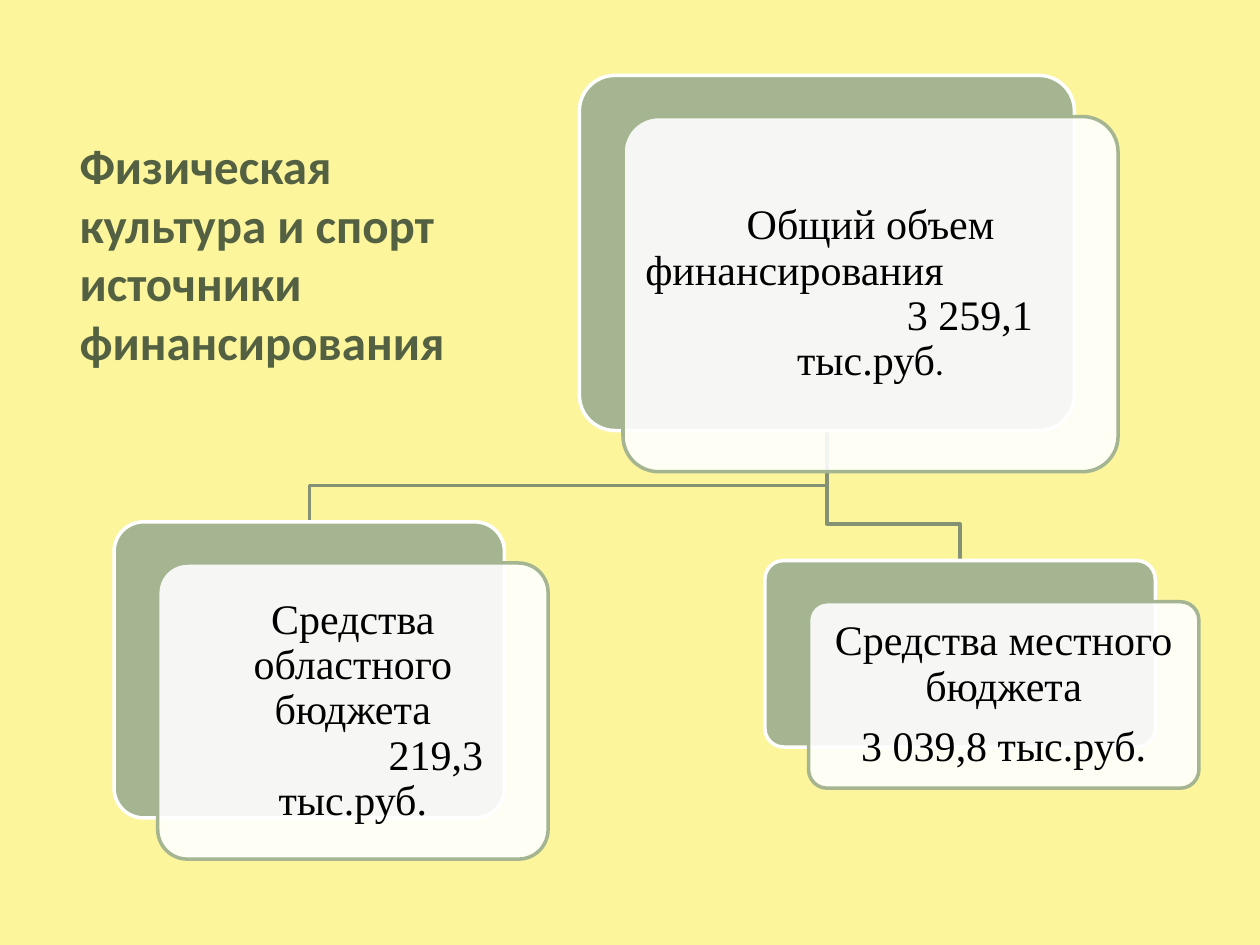
from pptx import Presentation
from pptx.dml.color import RGBColor
from pptx.enum import shapes, text
from pptx.oxml import parse_xml
from pptx.oxml.ns import nsdecls, qn
from pptx.util import Cm, Pt

SAGE, WHITE, LINK = "A5B592", "FFFFFF", "849175"
SERIF, SANS = "Times New Roman", "Calibri"
CENTER, LEFT = text.PP_ALIGN.CENTER, text.PP_ALIGN.LEFT
OFFSET_X, OFFSET_Y = 0.88, 0.83  # front panel against its back panel
ELBOW = 0.73  # height of the bend above the lower card
GAP = 8.4  # space between separate paragraphs, points


def color(value):
    return RGBColor.from_string(value)


def add_run(paragraph, words, size, face, tint, bold=False):
    run = paragraph.add_run()
    run.text = words
    run.font.size, run.font.name, run.font.bold = Pt(size), face, bold
    run.font.color.rgb = color(tint)


def heading(slide, box, lines):
    title = slide.shapes.title
    title.left, title.top, title.width, title.height = map(Cm, box)
    frame = title.text_frame
    frame.word_wrap = True
    frame.auto_size = text.MSO_AUTO_SIZE.NONE
    frame.vertical_anchor = text.MSO_ANCHOR.TOP
    for index, line in enumerate(lines):
        paragraph = frame.add_paragraph() if index else frame.paragraphs[0]
        paragraph.alignment = LEFT
        add_run(paragraph, line, 28, SANS, "536142", True)


def panel(slide, box, fill, outline):
    shape = slide.shapes.add_shape(
        shapes.MSO_SHAPE.ROUNDED_RECTANGLE, *map(Cm, box))
    shape.adjustments[0] = 0.1
    shape.shadow.inherit = False
    shape.fill.solid()
    shape.fill.fore_color.rgb = color(fill)
    shape.line.color.rgb = color(outline)
    shape.line.width = Pt(2)
    return shape


def card(slide, box, lines):
    """Two overlapping panels; lines are (runs, alignment, indent, space before)."""
    left, top, width, height = box
    panel(slide, box, SAGE, WHITE)
    front = panel(
        slide, (left + OFFSET_X, top + OFFSET_Y, width, height), WHITE, SAGE)
    # Let the back panel show through
    tint = front.fill._xPr.find(qn("a:solidFill"))[0]
    tint.append(parse_xml(f'<a:alpha {nsdecls("a")} val="90000"/>'))

    frame = front.text_frame
    frame.word_wrap = True
    frame.vertical_anchor = text.MSO_ANCHOR.MIDDLE
    frame.margin_left = frame.margin_right = Cm(0.24)
    frame.margin_top = frame.margin_bottom = Cm(0.24)
    for index, (runs, alignment, indent, before) in enumerate(lines):
        paragraph = frame.add_paragraph() if index else frame.paragraphs[0]
        paragraph.alignment = alignment
        paragraph.line_spacing = 0.9
        paragraph.space_before = Pt(before)
        paragraph._p.get_or_add_pPr().set("marL", str(Cm(indent)))
        for words, size, face in runs:
            add_run(paragraph, words, size, face, "000000")


def branch(slide, parent, child):
    """Elbow line from the parent's bottom middle to the child's top middle."""
    start_x, start_y = parent[0] + parent[2] / 2, parent[1] + parent[3]
    end_x, end_y = child[0] + child[2] / 2, child[1]
    bend = end_y - ELBOW
    builder = slide.shapes.build_freeform(Cm(start_x), Cm(start_y))
    builder.add_line_segments(
        [(Cm(x), Cm(y)) for x, y in
         ((start_x, bend), (end_x, bend), (end_x, end_y))], close=False)
    link = builder.convert_to_shape()
    link.shadow.inherit = False
    link.fill.background()
    link.line.color.rgb = color(LINK)
    link.line.width = Pt(2)


def funding_tree(slide, box):
    left, top = box
    total = (left + 9.38, top, 9.98, 7.16)
    regional = (left, top + 9, 7.87, 5.97)
    local = (left + 13.12, top + 9.78, 7.87, 3.76)

    # Branches lie behind the cards
    for child in (local, regional):
        branch(slide, total, child)

    card(slide, total, [
        ([("Общий объем", 24, SERIF)], CENTER, 0, 0),
        ([("финансирования", 24, SERIF)], LEFT, 0, 0),
        ([("3 259,1", 24, SERIF)], CENTER, 4, 0),
        ([("тыс.руб", 24, SERIF), (".", 20, SANS)], CENTER, 0, 0),
    ])
    card(slide, regional, [
        ([("Средства областного бюджета", 24, SERIF)], CENTER, 0, 0),
        ([("219,3", 24, SERIF)], CENTER, 3.35, 0),
        ([("тыс.руб.", 24, SERIF)], CENTER, 0, 0),
    ])
    card(slide, local, [
        ([("Средства местного бюджета", 24, SERIF)], CENTER, 0, 0),
        ([("3 039,8 тыс.руб.", 24, SERIF)], CENTER, 0, GAP),
    ])


def main():
    deck = Presentation()
    deck.slide_width, deck.slide_height = Cm(25.4), Cm(19.05)
    slide = deck.slides.add_slide(deck.slide_layouts[5])
    slide.background.fill.solid()
    slide.background.fill.fore_color.rgb = color("FDF59C")

    heading(slide, (1.35, 2.6, 8.35, 5.05),
            ["Физическая культура и спорт", "источники финансирования"])
    funding_tree(slide, (2.3, 1.52))
    deck.save("out.pptx")


if __name__ == "__main__":
    main()
